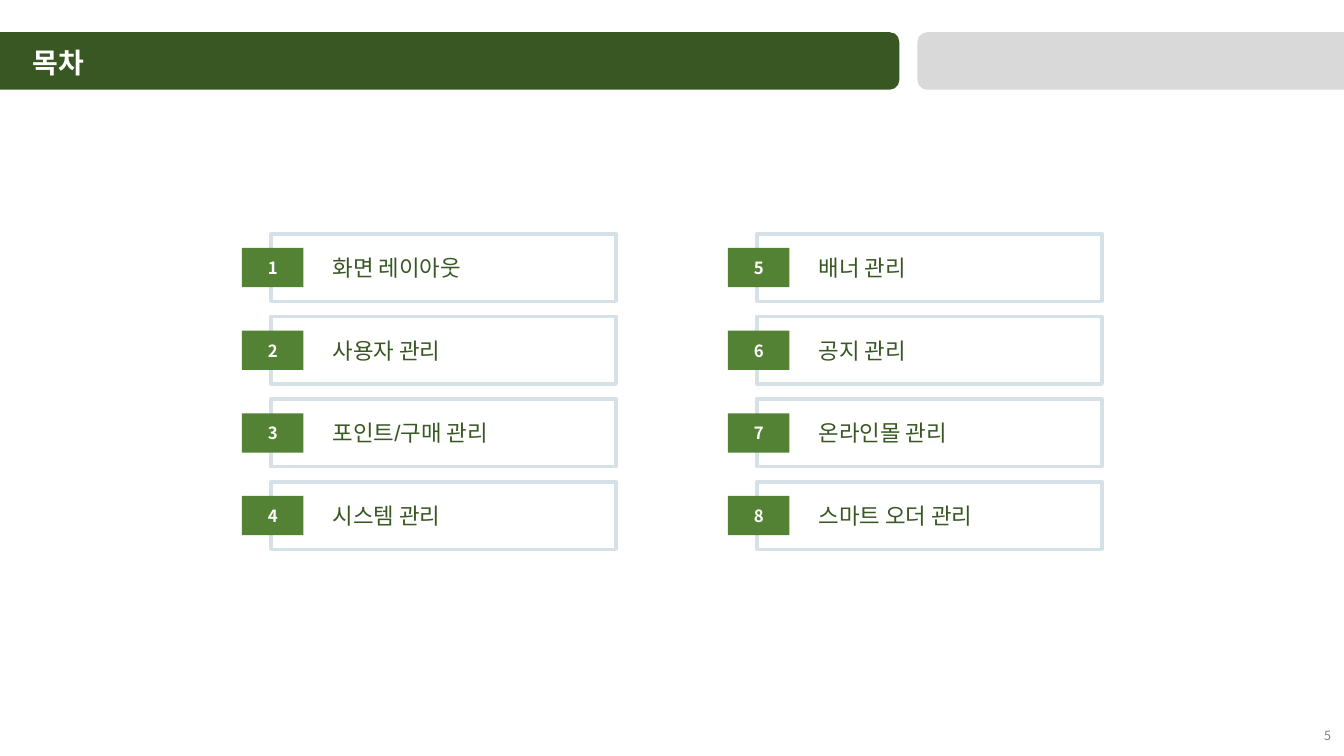
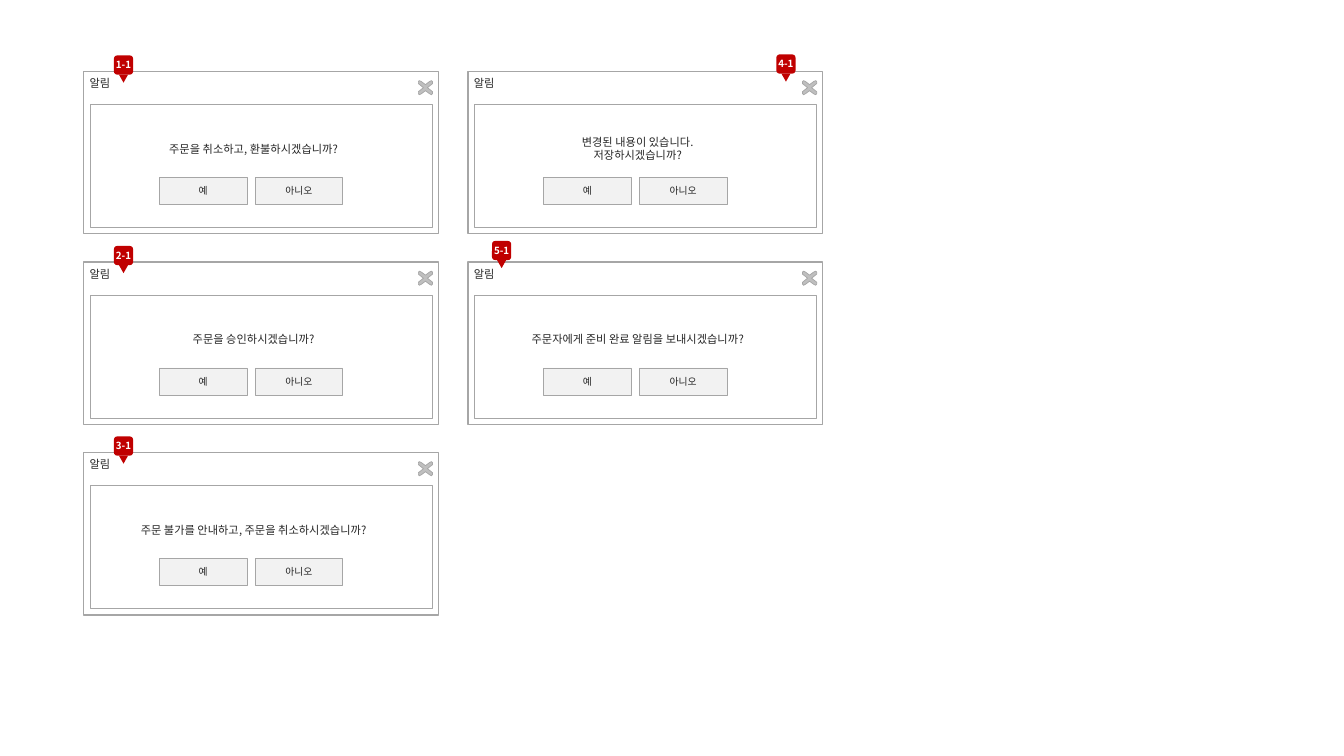
from itertools import product

from lxml.etree import SubElement
from pptx import Presentation
from pptx.dml.color import RGBColor
from pptx.enum.shapes import MSO_SHAPE
from pptx.enum.text import MSO_ANCHOR, MSO_AUTO_SIZE, PP_ALIGN
from pptx.oxml.ns import qn
from pptx.util import Inches, Pt

WHITE = RGBColor(0xFF, 0xFF, 0xFF)
DARK_GREEN = RGBColor(0x38, 0x57, 0x23)
GREEN = RGBColor(0x54, 0x82, 0x35)
BAND_GRAY = RGBColor(0xD9, 0xD9, 0xD9)
PALE_BLUE = RGBColor(0xD5, 0xE0, 0xE7)
PAGE_GRAY = RGBColor(0x80, 0x80, 0x80)
LINE_GRAY = RGBColor(0xA6, 0xA6, 0xA6)
CROSS_GRAY = RGBColor(0xBF, 0xBF, 0xBF)
BUTTON_GRAY = RGBColor(0xF2, 0xF2, 0xF2)
INK = RGBColor(0x26, 0x26, 0x26)
RED = RGBColor(0xC0, 0x00, 0x00)

LATIN = "Arial"
KOREAN = "Noto Sans CJK KR"

TITLE = {"name": LATIN, "size": Pt(20), "bold": True, "color": WHITE}
ENTRY = {"name": LATIN, "size": Pt(16), "bold": False, "color": DARK_GREEN}
NUMBER = {"name": KOREAN, "size": Pt(12), "bold": True, "color": WHITE}
PAGE = {"name": KOREAN, "size": Pt(9), "bold": False, "color": PAGE_GRAY}
MESSAGE = {"name": KOREAN, "size": Pt(8), "bold": False, "color": INK}
BUTTON = {"name": KOREAN, "size": Pt(7), "bold": False, "color": INK}
MARKER = {"name": KOREAN, "size": Pt(7), "bold": True, "color": WHITE}

MIDDLE = {"vertical_anchor": MSO_ANCHOR.MIDDLE, "word_wrap": True}
UNWRAPPED = {**MIDDLE, "word_wrap": False}
TIGHT = {
    "margin_left": Inches(0.06),
    "margin_right": Inches(0.06),
    "margin_top": Inches(0.03),
    "margin_bottom": Inches(0.03),
    "word_wrap": True,
}
NO_MARGIN = {
    **UNWRAPPED,
    "margin_left": 0,
    "margin_right": 0,
    "margin_top": 0,
    "margin_bottom": 0,
}
ENTRY_FRAME = {**MIDDLE, "margin_left": Inches(0.61), "margin_right": Inches(0.04)}
TITLE_FRAME = {
    "vertical_anchor": MSO_ANCHOR.TOP,
    "word_wrap": True,
    "auto_size": MSO_AUTO_SIZE.NONE,
}

CONTENTS = (
    ("화면 레이아웃", "사용자 관리", "포인트/구매 관리", "시스템 관리"),
    ("배너 관리", "공지 관리", "온라인몰 관리", "스마트 오더 관리"),
)
CONTENTS_LEFTS = (2.69, 7.51)
CONTENTS_TOP, CONTENTS_PITCH = 2.32, 0.82

DIALOGS = (
    (0, 0, "1-1", (0.3, -0.16), ("주문을 취소하고, 환불하시겠습니까?",)),
    (0, 1, "2-1", (0.3, -0.16), ("주문을 승인하시겠습니까?",)),
    (0, 2, "3-1", (0.3, -0.16), ("주문 불가를 안내하고, 주문을 취소하시겠습니까?",)),
    (1, 0, "4-1", (3.06, -0.17), ("변경된 내용이 있습니다.", "저장하시겠습니까?")),
    (1, 1, "5-1", (0.24, -0.21), ("주문자에게 준비 완료 알림을 보내시겠습니까?",)),
)
DIALOG_LEFT, DIALOG_TOP = 0.83, 0.71
DIALOG_PITCH_X, DIALOG_PITCH_Y = 3.81, 1.89
CROSS_ARM = ((-0.02, 0), (-0.07, -0.04), (-0.07, -0.06),
             (-0.06, -0.07), (-0.04, -0.06), (0, -0.03))


def apply(target, values):
    for key, value in values.items():
        setattr(target, key, value)


def write(holder, lines, style, frame, align=PP_ALIGN.LEFT):
    text_frame = holder.text_frame
    apply(text_frame, frame)
    font_values = {key: style[key] for key in ("name", "size", "bold")}
    for index, line in enumerate(lines):
        paragraph = text_frame.add_paragraph() if index else text_frame.paragraphs[0]
        paragraph.alignment = align
        run = paragraph.add_run()
        run.text = line
        apply(run.font, font_values)
        run.font.color.rgb = style["color"]
        SubElement(run.font._element, qn("a:ea"), typeface=KOREAN)


def paint(shape, fill, line=None, width=0):
    shape.shadow.inherit = False
    shape.fill.solid()
    shape.fill.fore_color.rgb = fill
    if line is None:
        shape.line.fill.background()
    else:
        shape.line.color.rgb = line
        shape.line.width = Pt(width)
    return shape


def add_box(shapes, box, fill, line=None, width=0, kind=MSO_SHAPE.RECTANGLE):
    return paint(shapes.add_shape(kind, *map(Inches, box)), fill, line, width)


def add_label(shapes, box, lines, style, frame, align=PP_ALIGN.LEFT):
    write(shapes.add_textbox(*map(Inches, box)), lines, style, frame, align)


def add_header(slide, text):
    for left, width, fill in ((-0.11, 9.03, DARK_GREEN), (9.1, 4.34, BAND_GRAY)):
        add_box(slide.shapes, (left, 0.32, width, 0.57), fill,
                kind=MSO_SHAPE.ROUNDED_RECTANGLE)
    title = slide.shapes.title
    title.element.getparent().append(title.element)
    placement = zip(("left", "top", "width", "height"), map(Inches, (0.22, 0.4, 4, 0.44)))
    apply(title, dict(placement))
    write(title, [text], TITLE, TITLE_FRAME)


def add_entry(shapes, left, top, number, text):
    panel = add_box(shapes, (left, top, 3.42, 0.67), WHITE, PALE_BLUE, 2.5)
    write(panel, [text], ENTRY, ENTRY_FRAME)
    tab = add_box(shapes, (left - 0.29, top + 0.14, 0.61, 0.39), GREEN)
    write(tab, [str(number)], NUMBER, MIDDLE, PP_ALIGN.CENTER)


def add_cross(shapes, center_x, center_y):
    points = []
    for side_y, side_x in ((1, 1), (1, -1), (-1, -1), (-1, 1)):
        arm = CROSS_ARM if side_x == side_y else CROSS_ARM[::-1]
        points += [(Inches(center_x + side_x * x), Inches(center_y + side_y * y))
                   for x, y in arm]
    outline = shapes.build_freeform(*points[0])
    outline.add_line_segments(points[1:], close=True)
    paint(outline.convert_to_shape(), CROSS_GRAY, LINE_GRAY, 0.5)


def add_marker(shapes, left, top, code):
    marker = shapes.add_group_shape().shapes
    pointer = add_box(marker, (left + 0.05, top + 0.19, 0.09, 0.08), RED,
                      kind=MSO_SHAPE.ISOSCELES_TRIANGLE)
    pointer.rotation = 180
    badge = add_box(marker, (left, top, 0.19, 0.19), RED,
                    kind=MSO_SHAPE.ROUNDED_RECTANGLE)
    write(badge, [code], MARKER, NO_MARGIN, PP_ALIGN.CENTER)


def add_dialog(shapes, left, top, code, marker_offset, message):
    add_box(shapes, (left, top, 3.52, 1.61), WHITE, LINE_GRAY, 1)
    add_box(shapes, (left + 0.07, top + 0.33, 3.39, 1.22), WHITE, LINE_GRAY, 0.75)
    for offset, answer in ((0.75, "예"), (1.7, "아니오")):
        button = add_box(shapes, (left + offset, top + 1.05, 0.87, 0.27),
                         BUTTON_GRAY, LINE_GRAY, 0.5)
        write(button, [answer], BUTTON, UNWRAPPED, PP_ALIGN.CENTER)
    add_cross(shapes, left + 3.39, top + 0.16)
    add_label(shapes, (left + 0.11, top + 0.49, 3.15, 0.55), message, MESSAGE,
              {**TIGHT, **MIDDLE}, PP_ALIGN.CENTER)
    add_label(shapes, (left, top + 0.02, 0.47, 0.21), ["알림"], MESSAGE, TIGHT)
    add_marker(shapes, left + marker_offset[0], top + marker_offset[1], code)


def build_contents(prs):
    slide = prs.slides.add_slide(prs.slide_layouts[5])
    add_header(slide, "목차")
    rows = len(CONTENTS[0])
    for column, row in product(range(len(CONTENTS)), range(rows)):
        add_entry(slide.shapes, CONTENTS_LEFTS[column],
                  CONTENTS_TOP + row * CONTENTS_PITCH,
                  column * rows + row + 1, CONTENTS[column][row])
    add_label(slide.shapes, (10.3, 7.1, 3, 0.4), ["5"], PAGE, MIDDLE, PP_ALIGN.RIGHT)


def build_dialogs(prs):
    slide = prs.slides.add_slide(prs.slide_layouts[6])
    for column, row, code, marker_offset, message in DIALOGS:
        add_dialog(slide.shapes, DIALOG_LEFT + column * DIALOG_PITCH_X,
                   DIALOG_TOP + row * DIALOG_PITCH_Y, code, marker_offset, message)


def main():
    prs = Presentation()
    apply(prs, {"slide_width": Inches(13.33), "slide_height": Inches(7.5)})
    build_contents(prs)
    build_dialogs(prs)
    prs.save("out.pptx")


if __name__ == "__main__":
    main()
